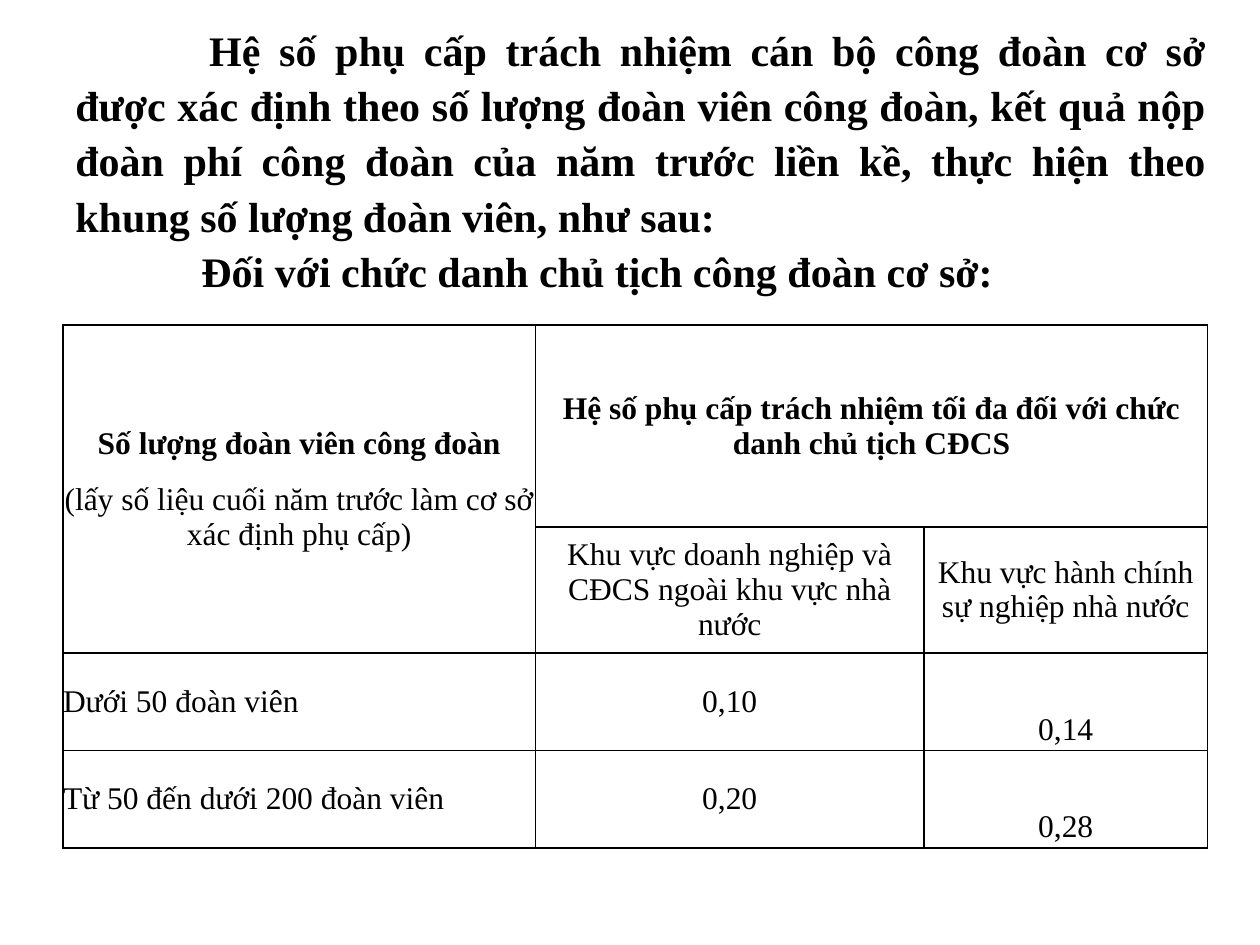
"""Build a slide on allowance coefficients with an introduction and a table."""
import dataclasses
import lxml.etree
import pptx
import pptx.dml.color
import pptx.enum.text
import pptx.oxml.ns
import pptx.util

Pt = pptx.util.Pt
Align = pptx.enum.text.PP_ALIGN
Anchor = pptx.enum.text.MSO_ANCHOR


@dataclasses.dataclass(frozen=True)
class Theme:
    font: str = "Times New Roman"
    ink: str = "000000"
    paper: str = "FFFFFF"
    title_size: int = 24
    table_size: int = 18
    border: int = 1
    spacing: int = 6


class SlideBuilder:
    def __init__(self, page, theme):
        self.page = page
        self.theme = theme

    def add_span(self, para, text, size, bold, align):
        para.alignment = align
        span = para.add_run()
        span.text = text
        span.font.name = self.theme.font
        span.font.size = Pt(size)
        span.font.bold = bold
        span.font.color.rgb = pptx.dml.color.RGBColor.from_string(self.theme.ink)

    def text(self, left, top, width, height, paragraphs):
        box = self.page.shapes.add_textbox(Pt(left), Pt(top), Pt(width), Pt(height))
        frame = box.text_frame
        frame.word_wrap = True
        frame.vertical_anchor = Anchor.BOTTOM
        for index, (text, align, indent) in enumerate(paragraphs):
            para = frame.add_paragraph() if index else frame.paragraphs[0]
            para.line_spacing = 1.1
            properties = para._p.get_or_add_pPr()
            properties.set("marL", "0")
            properties.set("indent", str(Pt(indent)))
            self.add_span(para, text, self.theme.title_size, True, align)

    def table(self, left, top, widths, heights):
        frame = self.page.shapes.add_table(
            len(heights), len(widths), Pt(left), Pt(top), Pt(sum(widths)), Pt(sum(heights)))
        table = frame.table
        for column, width in zip(table.columns, widths):
            column.width = Pt(width)
        for row, height in zip(table.rows, heights):
            row.height = Pt(height)
        for cell in table.iter_cells():
            self.borders(cell)
            cell.fill.solid()
            cell.fill.fore_color.rgb = pptx.dml.color.RGBColor.from_string(self.theme.paper)
            cell.margin_left = cell.margin_right = cell.margin_top = cell.margin_bottom = 0
            cell.vertical_anchor = Anchor.MIDDLE
        return table

    def borders(self, cell):
        qn = pptx.oxml.ns.qn
        properties = cell._tc.get_or_add_tcPr()
        for side in ("lnL", "lnR", "lnT", "lnB"):
            line = lxml.etree.SubElement(
                properties, qn(f"a:{side}"), w=str(Pt(self.theme.border)))
            fill = lxml.etree.SubElement(line, qn("a:solidFill"))
            lxml.etree.SubElement(fill, qn("a:srgbClr"), val=self.theme.ink)

    def cell(self, cell, paragraphs, align=Align.CENTER):
        for index, (text, bold) in enumerate(paragraphs):
            para = cell.text_frame.add_paragraph() if index else cell.text_frame.paragraphs[0]
            para.space_before = para.space_after = Pt(self.theme.spacing)
            self.add_span(para, text, self.theme.table_size, bold, align)


def main():
    deck = pptx.Presentation()
    deck.slide_width, deck.slide_height = Pt(720), Pt(540)
    page = deck.slides.add_slide(deck.slide_layouts[6])
    builder = SlideBuilder(page, Theme())

    table = builder.table(36, 185.8, [270, 222, 162], [115.2, 72, 55.8, 55.8])
    table.cell(0, 0).merge(table.cell(1, 0))
    table.cell(0, 1).merge(table.cell(0, 2))
    headings = {
        (0, 0): [("Số lượng đoàn viên công đoàn", True),
                 ("(lấy số liệu cuối năm trước làm cơ sở xác định phụ cấp)", False)],
        (0, 1): [("Hệ số phụ cấp trách nhiệm tối đa đối với chức danh chủ tịch CĐCS", True)],
        (1, 1): [("Khu vực doanh nghiệp và CĐCS ngoài khu vực nhà nước", False)],
        (1, 2): [("Khu vực hành chính sự nghiệp nhà nước", False)],
    }
    for position, paragraphs in headings.items():
        builder.cell(table.cell(*position), paragraphs)

    coefficients = [("Dưới 50 đoàn viên", "0,10", "0,14"),
                    ("Từ 50 đến dưới 200 đoàn viên", "0,20", "0,28")]
    for row, values in enumerate(coefficients, start=2):
        for column, value in enumerate(values):
            align = Align.CENTER if column else Align.LEFT
            builder.cell(table.cell(row, column), [(value, False)], align)
        public_sector = table.cell(row, 2)
        public_sector.vertical_anchor = Anchor.BOTTOM
        public_sector.margin_bottom = Pt(2)

    builder.text(36, 15.1, 660.2, 157.7, [
        ("Hệ số phụ cấp trách nhiệm cán bộ công đoàn cơ sở được xác định theo số lượng "
         "đoàn viên công đoàn, kết quả nộp đoàn phí công đoàn của năm trước liền kề, "
         "thực hiện theo khung số lượng đoàn viên, như sau:", Align.JUSTIFY, 76.5),
        ("Đối với chức danh chủ tịch công đoàn cơ sở:", Align.LEFT, 72),
    ])
    deck.save("out.pptx")


if __name__ == "__main__":
    main()
